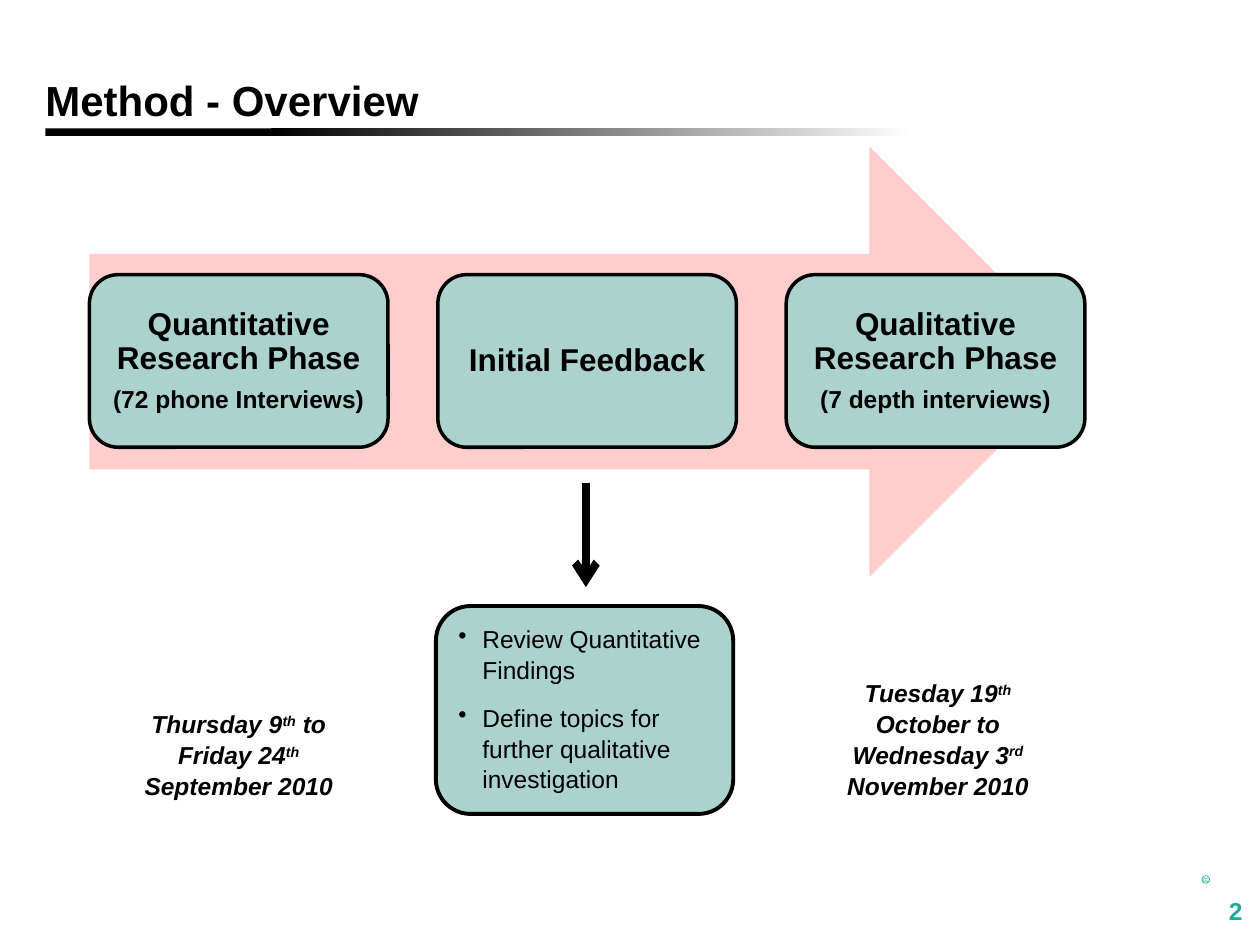
from lxml import etree
from pptx import Presentation
from pptx.dml.color import RGBColor
from pptx.enum.shapes import MSO_CONNECTOR, MSO_SHAPE
from pptx.enum.text import MSO_ANCHOR, PP_ALIGN
from pptx.oxml.ns import qn
from pptx.util import Inches, Pt

RECTANGLE, ROUNDED = MSO_SHAPE.RECTANGLE, MSO_SHAPE.ROUNDED_RECTANGLE
ELLIPSE, RIGHT_ARROW = MSO_SHAPE.OVAL, MSO_SHAPE.RIGHT_ARROW
STRAIGHT = MSO_CONNECTOR.STRAIGHT
TOP, MIDDLE, BOTTOM = MSO_ANCHOR.TOP, MSO_ANCHOR.MIDDLE, MSO_ANCHOR.BOTTOM
LEFT, CENTER, RIGHT = PP_ALIGN.LEFT, PP_ALIGN.CENTER, PP_ALIGN.RIGHT

COLORS = {"black": "000000", "white": "FFFFFF", "teal": "1BAB9D",
          "box": "ABD2CC", "arrow": "FFCECC"}
FONT = "Arial"

PHASES = [
    ["Quantitative Research Phase", "(72 phone Interviews)"],
    ["Initial Feedback"],
    ["Qualitative Research Phase", "(7 depth interviews)"],
]
FEEDBACK_STEPS = ["Review Quantitative Findings",
                  "Define topics for further qualitative investigation"]
DATES = [
    ((0.83, 5.58, 2.13, 0.81),
     ["Thursday 9", "th", " to Friday 24", "th", " September 2010"]),
    ((6.38, 5.34, 2.13, 1.04),
     ["Tuesday 19", "th", " October to Wednesday 3", "rd", " November 2010"]),
]


def color(name):
    """Return the named colour."""
    return RGBColor.from_string(COLORS[name])


def add_bullet(paragraph, indent=0.19):
    """Give a paragraph a hanging bullet."""
    properties = paragraph._p.get_or_add_pPr()
    properties.set("marL", str(Inches(indent)))
    properties.set("indent", str(-Inches(indent)))
    etree.SubElement(properties, qn("a:buChar")).set("char", "•")


def write(frame, runs, *, first=True, size=14, ink="black", bold=False,
          italic=False, align=LEFT, spacing=1.0, before=0, after=0,
          bullet=False):
    """Write one paragraph; every second run is superscript."""
    paragraph = frame.paragraphs[0] if first else frame.add_paragraph()
    paragraph.alignment = align
    paragraph.line_spacing = spacing
    paragraph.space_before = Pt(before)
    paragraph.space_after = Pt(after)
    if bullet:
        add_bullet(paragraph)
    for index, text in enumerate(runs):
        run = paragraph.add_run()
        run.text = text
        run.font.name, run.font.size = FONT, Pt(size)
        run.font.bold, run.font.italic = bold, italic
        run.font.color.rgb = color(ink)
        if index % 2:
            run._r.get_or_add_rPr().set("baseline", "30000")


def set_frame(frame, anchor, margins=None):
    """Set wrapping, anchor and, if given, equal margins."""
    frame.word_wrap = True
    frame.vertical_anchor = anchor
    if margins is not None:
        frame.margin_left = frame.margin_right = Inches(margins)
        frame.margin_top = frame.margin_bottom = Inches(margins)


def add_text(slide, box, runs, *, anchor=TOP, margins=None, rotation=0,
             **text_format):
    """Add a text box holding one paragraph."""
    shape = slide.shapes.add_textbox(*map(Inches, box))
    shape.rotation = rotation
    set_frame(shape.text_frame, anchor, margins)
    write(shape.text_frame, runs, **text_format)


def add_shape(slide, kind, box, fill=None, line=None, width=1.0):
    """Add a preset shape with a plain fill and outline."""
    shape = slide.shapes.add_shape(kind, *map(Inches, box))
    shape.shadow.inherit = False
    if fill:
        shape.fill.solid()
        shape.fill.fore_color.rgb = color(fill)
    else:
        shape.fill.background()
    if line:
        shape.line.color.rgb = color(line)
        shape.line.width = Pt(width)
    else:
        shape.line.fill.background()
    return shape


def add_title(slide):
    """Add the title and the fading rule under it."""
    add_shape(slide, RECTANGLE, (0.36, 1.02, 3.21, 0.06), "black")
    fade = add_shape(slide, RECTANGLE, (2.15, 1.02, 5.08, 0.06))
    fade.fill.gradient()
    fade.fill.gradient_angle = 0
    for stop, position, name in zip(fade.fill.gradient_stops, (0, 1),
                                    ("black", "white")):
        stop.position = position
        stop.color.rgb = color(name)
    add_text(slide, (0.36, 0.32, 6.9, 0.67), ["Method - Overview"],
             anchor=BOTTOM, margins=0, size=24, bold=True)


def add_footer(slide):
    """Add the registered mark and the page number."""
    add_text(slide, (9.45, 6.9, 0.24, 0.17), ["R"], rotation=270,
             size=4, ink="teal")
    mark = add_shape(slide, ELLIPSE, (9.54, 6.95, 0.06, 0.06), None, "teal", 0.4)
    mark.rotation = 270
    add_text(slide, (9.41, 7.06, 0.55, 0.31), ["2"], ink="teal",
             bold=True, align=RIGHT)


def add_phase(slide, left, lines):
    """Add one phase box with a heading and an optional detail."""
    shape = add_shape(slide, ROUNDED, (left, 2.18, 2.37, 1.37),
                      "box", "black", 2)
    set_frame(shape.text_frame, MIDDLE, 0.07)
    for index, (text, size) in enumerate(zip(lines, (18, 14))):
        write(shape.text_frame, [text], first=index == 0, size=size,
              bold=True, align=CENTER, spacing=0.9, after=0.35 * size)


def add_feedback(slide):
    """Add the box of feedback steps and the arrow leading to it."""
    shape = add_shape(slide, ROUNDED, (3.46, 4.81, 2.36, 1.65),
                      "box", "black", 2.25)
    set_frame(shape.text_frame, TOP)
    for index, step in enumerate(FEEDBACK_STEPS):
        write(shape.text_frame, [step], first=index == 0, spacing=1.05,
              before=9.8 if index else 0, bullet=True)
    add_arrow(slide, 4.65, 3.83, 4.66)


def add_arrow(slide, x, top, bottom):
    """Add a downward line arrow."""
    arrow = slide.shapes.add_connector(
        STRAIGHT, *map(Inches, (x, top, x, bottom)))
    arrow.line.color.rgb = color("black")
    arrow.line.width = Pt(4.5)
    etree.SubElement(arrow.line._get_or_add_ln(), qn("a:tailEnd")).set(
        "type", "arrow")
    etree.SubElement(arrow._element.spPr, qn("a:effectLst"))


def main():
    """Build and save the slide."""
    presentation = Presentation()
    presentation.slide_width = Inches(10)
    presentation.slide_height = Inches(7.5)
    slide = presentation.slides.add_slide(presentation.slide_layouts[6])
    add_footer(slide)
    add_title(slide)
    add_shape(slide, RIGHT_ARROW, (0.71, 1.16, 7.9, 3.42), "arrow")
    for index, lines in enumerate(PHASES):
        add_phase(slide, 0.71 + index * 2.765, lines)
    add_feedback(slide)
    for box, runs in DATES:
        add_text(slide, box, runs, anchor=MIDDLE, bold=True, italic=True,
                 align=CENTER, spacing=1.05)
    presentation.save("out.pptx")


if __name__ == "__main__":
    main()
